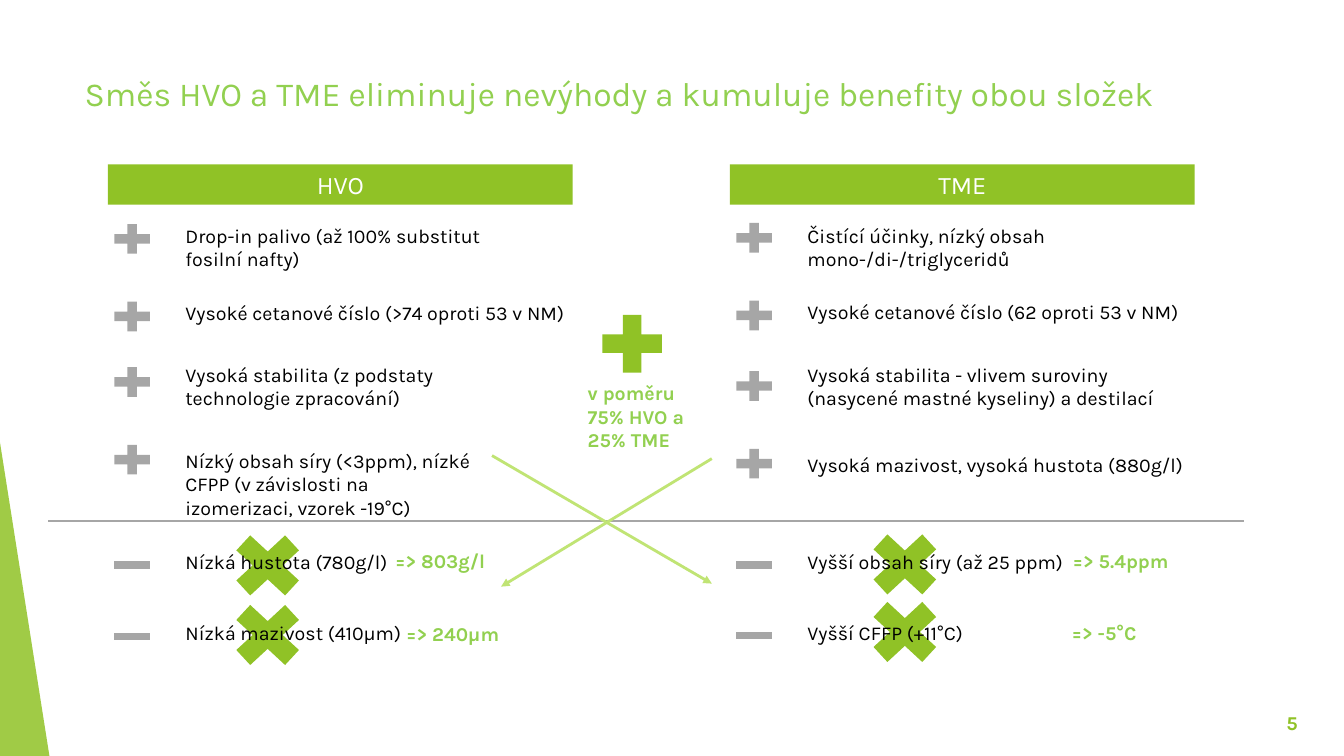
from lxml.etree import SubElement
from pptx import Presentation
from pptx.dml.color import RGBColor
from pptx.enum.shapes import MSO_CONNECTOR, MSO_SHAPE
from pptx.enum.text import MSO_ANCHOR, MSO_AUTO_SIZE, PP_ALIGN
from pptx.oxml.ns import qn
from pptx.util import Inches, Pt

COLORS = {
    "green": "90C226",
    "bright": "92D050",
    "pale": "C0E474",
    "gray": "A6A6A6",
    "black": "000000",
    "white": "FFFFFF",
}
BODY = {"size": Pt(14), "name": "Karla", "bold": False}
STRONG = {**BODY, "bold": True}
HEADER = {**BODY, "size": Pt(18)}
TITLE = {**BODY, "size": Pt(24)}

HVO_BENEFITS = [
    (2.17, 2.17, 3.66, 0.57, "Drop-in palivo (až 100% substitut fosilní nafty)"),
    (2.94, 2.94, 4.78, 0.34, "Vysoké cetanové číslo (>74 oproti 53 v NM)"),
    (3.59, 3.55, 3.13, 0.57, "Vysoká stabilita (z podstaty technologie zpracování)"),
    (4.36, 4.4, 3.13, 0.81,
     "Nízký obsah síry (<3ppm), nízké CFPP (v závislosti na izomerizaci, vzorek -19°C)"),
]
TME_BENEFITS = [
    (2.16, 2.17, 3.94, 0.57, "Čistící účinky, nízký obsah mono-/di-/triglyceridů"),
    (2.93, 2.93, 4.78, 0.34, "Vysoké cetanové číslo (62 oproti 53 v NM)"),
    (3.63, 3.55, 3.94, 0.57,
     "Vysoká stabilita - vlivem suroviny (nasycené mastné kyseliny) a destilací"),
    (4.4, 4.44, 4.31, 0.34, "Vysoká mazivost, vysoká hustota (880g/l)"),
]
HVO_DRAWBACKS = [
    (5.18, 5.45, 5.41, "Nízká hustota (780g/l)", 3.82, 5.4, "=> 803g/l"),
    (5.87, 6.16, 6.11, "Nízká mazivost (410µm)", 3.93, 6.12, "=> 240µm"),
]
TME_DRAWBACKS = [
    (5.17, 5.45, 5.41, "Vyšší obsah síry (až 25 ppm)", 10.54, 5.4, "=> 5.4ppm"),
    (5.84, 6.15, 6.11, "Vyšší CFFP (+11°C)", 10.53, 6.11, "=> -5°C"),
]
COLUMNS = [
    ("HVO", 1.07, 2.19, HVO_BENEFITS, HVO_DRAWBACKS),
    ("TME", 7.24, 8.51, TME_BENEFITS, TME_DRAWBACKS),
]


def color(name):
    return RGBColor.from_string(COLORS[name])


def write_text(shape, lines, font_format, color_name, align, anchor=MSO_ANCHOR.TOP):
    frame = shape.text_frame
    frame.word_wrap = True
    frame.auto_size = MSO_AUTO_SIZE.NONE
    frame.vertical_anchor = anchor
    frame.text = "\n".join(lines)
    for paragraph in frame.paragraphs:
        paragraph.alignment = align
        font = paragraph.runs[0].font
        for attribute, value in font_format.items():
            setattr(font, attribute, value)
        font.color.rgb = color(color_name)


def add_text(slide, box, lines, font_format, color_name,
             align=PP_ALIGN.LEFT, anchor=MSO_ANCHOR.TOP):
    shape = slide.shapes.add_textbox(*map(Inches, box))
    write_text(shape, lines, font_format, color_name, align, anchor)


def add_symbol(slide, kind, box, color_name):
    shape = slide.shapes.add_shape(kind, *map(Inches, box))
    shape.shadow.inherit = False
    shape.fill.solid()
    shape.fill.fore_color.rgb = color(color_name)
    shape.line.fill.background()
    return shape


def add_line(slide, start, end, color_name, width, arrow=False):
    connector = slide.shapes.add_connector(
        MSO_CONNECTOR.STRAIGHT, *map(Inches, (*start, *end)))
    connector.line.color.rgb = color(color_name)
    connector.line.width = Pt(width)
    if arrow:
        SubElement(connector.line._get_or_add_ln(), qn("a:tailEnd"), type="triangle")
    SubElement(connector._element.spPr, qn("a:effectLst"))


def add_corner_accent(slide):
    accent = add_symbol(slide, MSO_SHAPE.ISOSCELES_TRIANGLE, (0, 4.39, 0.49, 3.11), "green")
    accent.adjustments[0] = 0
    fill_color = accent._element.spPr.find(qn("a:solidFill"))[0]
    SubElement(fill_color, qn("a:alpha"), val="85000")


def add_column(slide, name, left, cross_left, benefits, drawbacks):
    text_left = left + 0.67
    header = add_symbol(slide, MSO_SHAPE.RECTANGLE, (left, 1.63, 4.61, 0.4), "green")
    write_text(header, [name], HEADER, "white", PP_ALIGN.CENTER, MSO_ANCHOR.MIDDLE)
    for plus_top, text_top, width, height, text in benefits:
        add_symbol(slide, MSO_SHAPE.MATH_PLUS, (left, plus_top, 0.48, 0.4), "gray")
        add_text(slide, (text_left, text_top, width, height), [text], BODY, "black")
    for cross_top, minus_top, text_top, text, result_left, result_top, result in drawbacks:
        add_symbol(slide, MSO_SHAPE.MATH_MULTIPLY, (cross_left, cross_top, 0.93, 0.86), "green")
        add_symbol(slide, MSO_SHAPE.MATH_MINUS, (left, minus_top, 0.48, 0.31), "gray")
        add_text(slide, (text_left, text_top, 2.85, 0.34), [text], BODY, "black")
        add_text(slide, (result_left, result_top, 1.52, 0.34), [result], STRONG, "bright")


def main():
    presentation = Presentation()
    presentation.slide_width = Inches(13.33)
    presentation.slide_height = Inches(7.5)
    slide = presentation.slides.add_slide(presentation.slide_layouts[6])

    add_corner_accent(slide)
    add_text(slide, (0.74, 0.67, 11.48, 0.82),
             ["Směs HVO a TME eliminuje nevýhody a kumuluje benefity obou složek"],
             TITLE, "bright", PP_ALIGN.JUSTIFY)
    for column in COLUMNS:
        add_column(slide, *column)

    add_line(slide, (0.48, 5.17), (12.34, 5.17), "gray", 1)
    add_symbol(slide, MSO_SHAPE.MATH_PLUS, (5.87, 3.02, 0.8, 0.78), "green")
    add_text(slide, (5.73, 3.73, 1.52, 0.81), ["v poměru", "75% HVO a 25% TME"],
             STRONG, "bright")
    add_line(slide, (4.88, 4.52), (7.06, 5.79), "pale", 2, arrow=True)
    add_line(slide, (7.06, 4.55), (4.97, 5.82), "pale", 2, arrow=True)
    add_text(slide, (12.22, 6.97, 0.75, 0.4), ["5"], STRONG, "green",
             PP_ALIGN.RIGHT, MSO_ANCHOR.MIDDLE)
    presentation.save("out.pptx")


if __name__ == "__main__":
    main()
